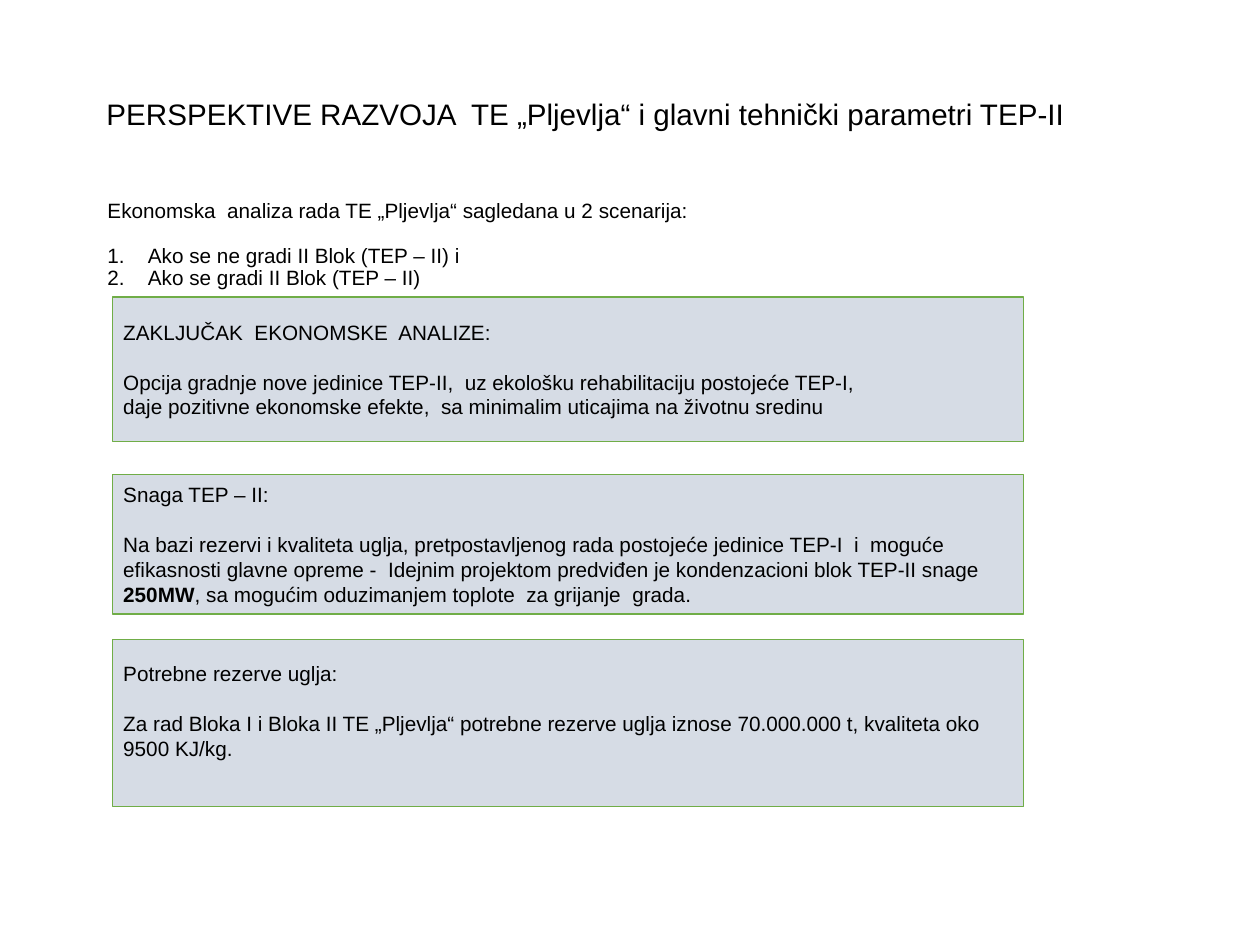
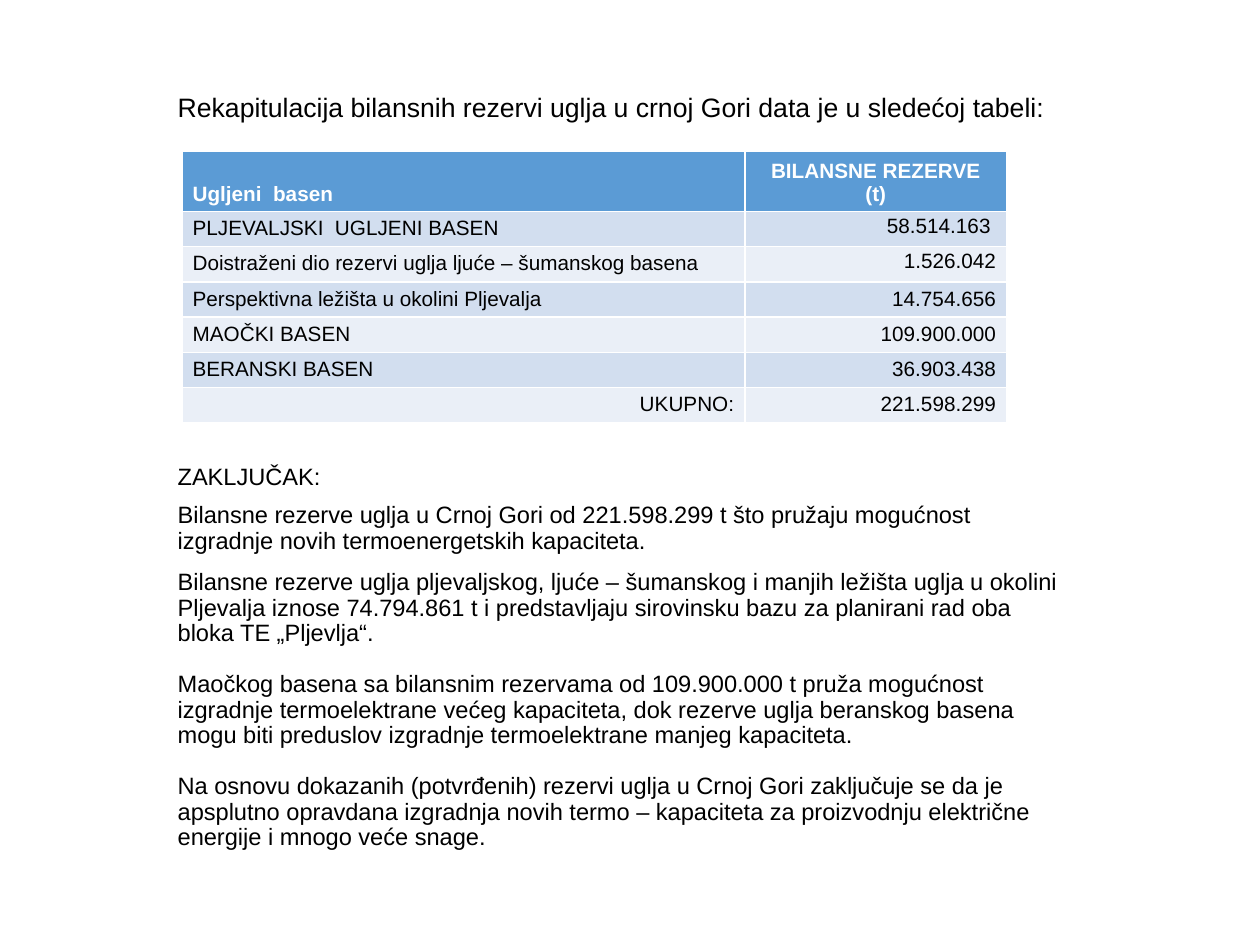
from dataclasses import dataclass
from itertools import zip_longest

from lxml.etree import SubElement
from pptx import Presentation
from pptx.dml.color import RGBColor
from pptx.enum.shapes import MSO_SHAPE
from pptx.enum.text import MSO_ANCHOR, MSO_AUTO_SIZE, PP_ALIGN
from pptx.oxml.ns import qn
from pptx.util import Inches, Pt


@dataclass(frozen=True)
class Theme:
    font: str = "Arial"
    ink: str = "000000"
    paper: str = "FFFFFF"
    panel: str = "D6DCE5"
    edge: str = "70AD47"
    head: str = "5B9BD5"
    bands: tuple = ("D2DEEF", "EAEFF7")
    title: int = 20
    lead: int = 18
    text: int = 16
    small: int = 14
    tight: float = 0.9
    wide: tuple = (0.11, 0.06, 0.11, 0.06)
    slim: tuple = (0.1, 0.05, 0.1, 0.05)


theme = Theme()


def write(frame, *lines, size=theme.small, color=theme.ink, bold=False,
          align=PP_ALIGN.LEFT, spacing=1.0, gaps=(), pads=theme.wide,
          anchor=MSO_ANCHOR.TOP):
    """Fill a frame; gaps are points before each line, ** marks bold parts."""
    frame.word_wrap = True
    frame.auto_size = MSO_AUTO_SIZE.NONE
    frame.vertical_anchor = anchor
    (frame.margin_left, frame.margin_top,
     frame.margin_right, frame.margin_bottom) = map(Inches, pads)
    for i, (line, gap) in enumerate(zip_longest(lines, gaps, fillvalue=0)):
        para = frame.add_paragraph() if i else frame.paragraphs[0]
        para.alignment = align
        para.line_spacing = spacing
        para.space_before = Pt(gap)
        for j, part in enumerate(line.split("**")):
            run = para.add_run()
            run.text = part
            run.font.name = theme.font
            run.font.size = Pt(size)
            run.font.bold = bold or j % 2 == 1
            run.font.color.rgb = RGBColor.from_string(color)


def start(text, left, top, width, height, **fmt):
    """Add a slide with its title placed and written."""
    slide = deck.slides.add_slide(deck.slide_layouts[5])
    title = slide.shapes.title
    title.left, title.top = Inches(left), Inches(top)
    title.width, title.height = Inches(width), Inches(height)
    write(title.text_frame, text, spacing=theme.tight, **fmt)
    return slide


deck = Presentation()
deck.slide_width, deck.slide_height = Inches(11.84), Inches(8.88)

# Development outlook
slide = start("PERSPEKTIVE RAZVOJA  TE „Pljevlja“ i glavni tehnički parametri TEP-II",
              0.89, 0.47, 10.13, 1.24, size=theme.title, anchor=MSO_ANCHOR.MIDDLE)

intro = slide.shapes.add_textbox(Inches(0.9), Inches(1.83), Inches(10.12), Inches(0.95))
write(intro.text_frame,
      "Ekonomska  analiza rada TE „Pljevlja“ sagledana u 2 scenarija:",
      "Ako se ne gradi II Blok (TEP – II) i",
      "Ako se gradi II Blok (TEP – II)",
      spacing=theme.tight, gaps=(0, 15))
for para in intro.text_frame.paragraphs[1:]:
    props = para._p.get_or_add_pPr()
    props.set("marL", str(Inches(0.38)))
    props.set("indent", str(Inches(-0.38)))
    SubElement(props, qn("a:buFont"), typeface=theme.font)
    SubElement(props, qn("a:buAutoNum"), type="arabicPeriod")

panels = [
    (2.79, 1.36, 0.05, [
        "ZAKLJUČAK  EKONOMSKE  ANALIZE:",
        "Opcija gradnje nove jedinice TEP-II,  uz ekološku rehabilitaciju postojeće TEP-I,",
        "daje pozitivne ekonomske efekte,  sa minimalim uticajima na životnu sredinu"]),
    (4.46, 1.31, 0.05, [
        "Snaga TEP – II:",
        "Na bazi rezervi i kvaliteta uglja, pretpostavljenog rada postojeće jedinice "
        "TEP-I  i  moguće efikasnosti glavne opreme -  Idejnim projektom predviđen je "
        "kondenzacioni blok TEP-II snage **250MW**, sa mogućim oduzimanjem toplote  "
        "za grijanje  grada."]),
    (6.01, 1.57, 0.28, [
        "Potrebne rezerve uglja:",
        "Za rad Bloka I i Bloka II TE „Pljevlja“ potrebne rezerve uglja iznose "
        "70.000.000 t, kvaliteta oko 9500 KJ/kg."]),
]
for top, height, foot, lines in panels:
    panel = slide.shapes.add_shape(MSO_SHAPE.FLOWCHART_PROCESS, Inches(1.06),
                                   Inches(top), Inches(8.56), Inches(height))
    panel.shadow.inherit = False
    panel.fill.solid()
    panel.fill.fore_color.rgb = RGBColor.from_string(theme.panel)
    panel.line.color.rgb = RGBColor.from_string(theme.edge)
    panel.line.width = Pt(1)
    write(panel.text_frame, *lines, gaps=(0, 17), pads=(*theme.slim[:3], foot),
          anchor=MSO_ANCHOR.MIDDLE)

# Coal reserves
slide = start("Rekapitulacija bilansnih rezervi uglja u crnoj Gori data je u sledećoj tabeli:",
              1.56, 0.83, 8.6, 0.45, size=theme.lead)

rows = [
    ("PLJEVALJSKI  UGLJENI BASEN", "58.514.163"),
    ("Doistraženi dio rezervi uglja ljuće – šumanskog basena", "1.526.042"),
    ("Perspektivna ležišta u okolini Pljevalja", "14.754.656"),
    ("MAOČKI BASEN", "109.900.000"),
    ("BERANSKI BASEN", "36.903.438"),
    ("UKUPNO:", "221.598.299"),
]
table = slide.shapes.add_table(len(rows) + 1, 2, Inches(1.71), Inches(1.42),
                               Inches(7.75), Inches(2.55)).table
table.columns[0].width, table.columns[1].width = Inches(5.29), Inches(2.46)
for i, row in enumerate(table.rows):
    row.height = Inches(0.33 if i else 0.57)
    for cell in row.cells:
        cell.fill.solid()
        shade = theme.bands[(i - 1) % 2] if i else theme.head
        cell.fill.fore_color.rgb = RGBColor.from_string(shade)
        (cell.margin_left, cell.margin_top,
         cell.margin_right, cell.margin_bottom) = map(Inches, theme.slim)

heads = [(["Ugljeni  basen"], PP_ALIGN.LEFT), (["BILANSNE REZERVE", "(t)"], PP_ALIGN.CENTER)]
for cell, (lines, align) in zip(table.rows[0].cells, heads):
    write(cell.text_frame, *lines, color=theme.paper, bold=True, align=align)
    cell.vertical_anchor = MSO_ANCHOR.BOTTOM
    (cell.margin_left, cell.margin_top,
     cell.margin_right, cell.margin_bottom) = map(Inches, theme.slim)

for i, (basin, tons) in enumerate(rows, 1):
    side = PP_ALIGN.RIGHT if i == len(rows) else PP_ALIGN.LEFT
    write(table.cell(i, 0).text_frame, basin, align=side, pads=theme.slim)
    write(table.cell(i, 1).text_frame, tons, align=PP_ALIGN.RIGHT, pads=theme.slim,
          spacing=theme.tight if i < 3 else 1.0)
table.cell(1, 1).margin_right = Inches(0.15)

close = slide.shapes.add_textbox(Inches(1.56), Inches(4.31), Inches(8.6), Inches(3.81))
write(close.text_frame,
      "ZAKLJUČAK:",
      "Bilansne rezerve uglja u Crnoj Gori od 221.598.299 t što pružaju mogućnost "
      "izgradnje novih termoenergetskih kapaciteta.",
      "Bilansne rezerve uglja pljevaljskog, ljuće – šumanskog i manjih ležišta uglja "
      "u okolini Pljevalja iznose 74.794.861 t i predstavljaju sirovinsku bazu za "
      "planirani rad oba bloka TE „Pljevlja“.",
      "Maočkog basena sa bilansnim rezervama od 109.900.000 t pruža mogućnost "
      "izgradnje termoelektrane većeg kapaciteta, dok rezerve uglja beranskog basena "
      "mogu biti preduslov izgradnje termoelektrane manjeg kapaciteta.",
      "Na osnovu dokazanih (potvrđenih) rezervi uglja u Crnoj Gori zaključuje se da je "
      "apsplutno opravdana izgradnja novih termo – kapaciteta za proizvodnju "
      "električne energije i mnogo veće snage.",
      size=theme.text, spacing=theme.tight, gaps=(0, 8.6, 10.8, 17.3, 17.3))

deck.save("out.pptx")
